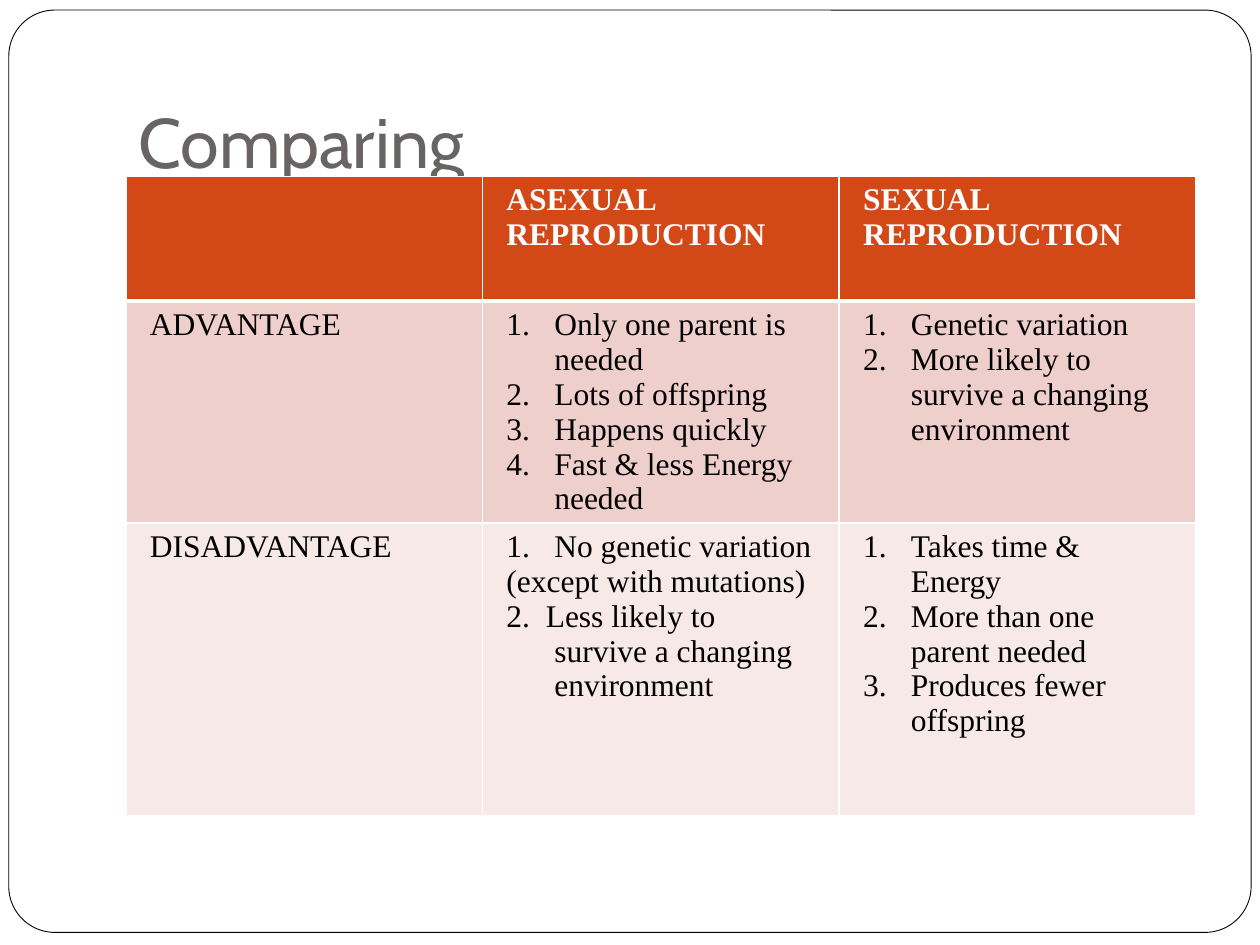
import pptx
import pptx.dml.color
import pptx.enum.shapes
import pptx.enum.text
import pptx.oxml
import pptx.oxml.ns
import pptx.util
from pptx.util import Inches

COLORS = {
    "white": "FFFFFF", "black": "000000", "title": "696464",
    "header": "D34817", "advantage": "EFCFCC", "disadvantage": "F7E9E8",
}


def rgb(name):
    return pptx.dml.color.RGBColor.from_string(COLORS[name])


def write(paragraph, text, font="Times New Roman", size=18, color="black",
          bold=False, hanging=False, numbered=False):
    run = paragraph.add_run()
    run.text = text
    run.font.name = font
    run.font.size = pptx.util.Pt(size)
    run.font.bold = bold
    run.font.color.rgb = rgb(color)
    paragraph.alignment = pptx.enum.text.PP_ALIGN.LEFT
    properties = paragraph._p.get_or_add_pPr()
    if hanging:
        properties.set("marL", str(Inches(0.38)))
        properties.set("indent", str(Inches(-0.38)))
    if numbered:
        number = pptx.oxml.parse_xml(
            f'<a:buAutoNum {pptx.oxml.ns.nsdecls("a")} type="arabicPeriod"/>')
        properties.append(number)


presentation = pptx.Presentation()
presentation.slide_width = Inches(10)
presentation.slide_height = Inches(7.5)
slide = presentation.slides.add_slide(presentation.slide_layouts[5])

# Rounded frame, placed behind the title
frame = slide.shapes.add_shape(
    pptx.enum.shapes.MSO_SHAPE.ROUNDED_RECTANGLE,
    Inches(0.07), Inches(0.08), Inches(9.86), Inches(7.32))
frame.adjustments[0] = 0.05
frame.shadow.inherit = False
frame.fill.solid()
frame.fill.fore_color.rgb = rgb("white")
frame.line.color.rgb = rgb("black")
frame.line.width = pptx.util.Pt(0.5)
slide.shapes._spTree.insert(2, frame._element)

# Title
title = slide.shapes.title
title.left, title.top = Inches(1), Inches(0.3)
title.width, title.height = Inches(8.5), Inches(1.25)
text_frame = title.text_frame
text_frame.auto_size = pptx.enum.text.MSO_AUTO_SIZE.NONE
text_frame.vertical_anchor = pptx.enum.text.MSO_ANCHOR.BOTTOM
text_frame.margin_bottom = Inches(0.1)
write(text_frame.paragraphs[0], "Comparing", font="Cabin", size=40, color="title")

# Comparison table: each cell is a list of (text, numbered) lines
rows = [
    ("header", 0.99, [
        [],
        [("ASEXUAL REPRODUCTION", False)],
        [("SEXUAL REPRODUCTION", False)],
    ]),
    ("advantage", 1.73, [
        [("ADVANTAGE", False)],
        [("Only one parent is needed", True), ("Lots of offspring", True),
         ("Happens quickly", True), ("Fast & less Energy needed", True)],
        [("Genetic variation", True),
         ("More likely to survive a changing environment", True)],
    ]),
    ("disadvantage", 2.32, [
        [("DISADVANTAGE", False)],
        [("No genetic variation", True), ("(except with mutations)", False),
         ("2.  Less likely to survive a changing environment", False)],
        [("Takes time & Energy", True), ("More than one parent needed", True),
         ("Produces fewer offspring", True)],
    ]),
]
table = slide.shapes.add_table(
    len(rows), 3, Inches(1), Inches(1.4), Inches(8.5), Inches(5.04)).table
for column in table.columns:
    column.width = Inches(2.83)

for row_index, (kind, height, contents) in enumerate(rows):
    table.rows[row_index].height = Inches(height)
    is_header = kind == "header"
    for column_index, lines in enumerate(contents):
        cell = table.cell(row_index, column_index)
        cell.margin_left = cell.margin_right = Inches(0.19)
        cell.margin_top = cell.margin_bottom = Inches(0.05)

        # White borders, thicker around the header's lower edge
        for side in "LRTB":
            thick = (side == "B" and is_header) or (side == "T" and row_index == 1)
            width = pptx.util.Pt(3 if thick else 1)
            cell._tc.get_or_add_tcPr().append(pptx.oxml.parse_xml(
                f'<a:ln{side} {pptx.oxml.ns.nsdecls("a")} w="{width}"><a:solidFill>'
                f'<a:srgbClr val="{COLORS["white"]}"/></a:solidFill></a:ln{side}>'))
        cell.fill.solid()
        cell.fill.fore_color.rgb = rgb(kind)

        for line_index, (text, numbered) in enumerate(lines):
            paragraph = (cell.text_frame.add_paragraph() if line_index
                         else cell.text_frame.paragraphs[0])
            write(paragraph, text, color="white" if is_header else "black",
                  bold=is_header, hanging=len(lines) > 1, numbered=numbered)

presentation.save("out.pptx")
